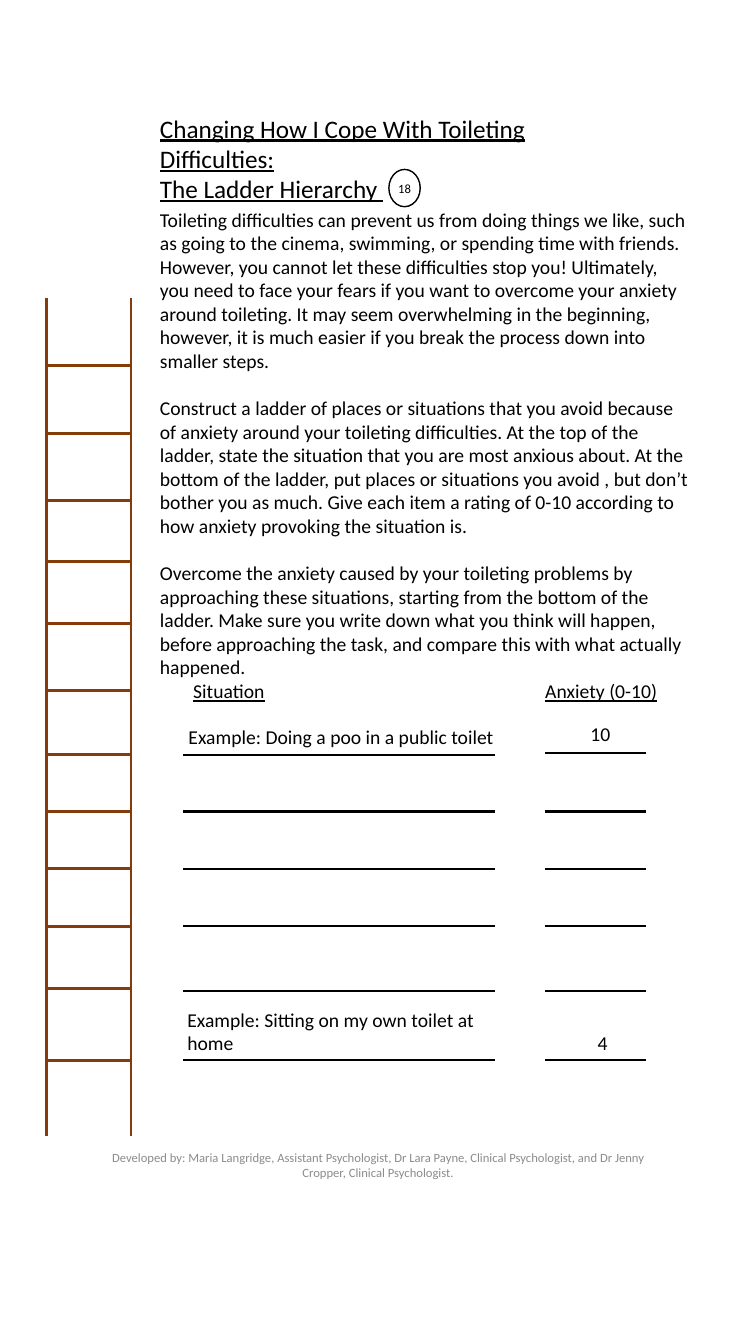
from lxml import etree
from pptx import Presentation, util as u
from pptx.dml.color import RGBColor
from pptx.enum import shapes, text
from pptx.oxml.ns import qn

COLOURS = {"ink": "000000", "wood": "843C0B", "credit": "8C8C8C"}
FONT = "Calibri"
RUNGS = [1.7, 3.4, 5.1, 6.63, 8.2, 9.88, 11.5, 12.93, 14.37, 15.82, 17.4, 19.2]
SITUATION_LINES = [2.03, 3.46, 4.9, 6.35, 7.98, 9.73]
RATING_LINES = [1.98, *SITUATION_LINES[1:]]
TITLE = ["Changing How I Cope With Toileting Difficulties:", "The Ladder Hierarchy "]
INTRODUCTION = [
    "Toileting difficulties can prevent us from doing things we like, such as going to the "
    "cinema, swimming, or spending time with friends. However, you cannot let these "
    "difficulties stop you! Ultimately, you need to face your fears if you want to overcome "
    "your anxiety around toileting. It may seem overwhelming in the beginning, however, it is "
    "much easier if you break the process down into smaller steps.",
    "Construct a ladder of places or situations that you avoid because of anxiety around your "
    "toileting difficulties. At the top of the ladder, state the situation that you are most "
    "anxious about. At the bottom of the ladder, put places or situations you avoid , but "
    "don’t bother you as much. Give each item a rating of 0-10 according to how anxiety "
    "provoking the situation is.",
    "Overcome the anxiety caused by your toileting problems by approaching these situations, "
    "starting from the bottom of the ladder. Make sure you write down what you think will "
    "happen, before approaching the task, and compare this with what actually happened.",
]
CREDIT = ("Developed by: Maria Langridge, Assistant Psychologist, Dr Lara Payne, Clinical "
          "Psychologist, and Dr Jenny Cropper, Clinical Psychologist.")


def colour(name):
    """Return the named colour."""
    return RGBColor.from_string(COLOURS[name])


def write(shape, paragraphs, size=14, ink="ink", underline=False, gap=0,
          align=text.PP_ALIGN.LEFT):
    """Fill a shape with evenly formatted paragraphs."""
    frame = shape.text_frame
    frame.text = "\n".join(paragraphs)
    for index, paragraph in enumerate(frame.paragraphs):
        paragraph.alignment = align
        paragraph.space_before = u.Pt(gap if index else 0)
        for run in paragraph.runs:
            run.font.name = FONT
            run.font.size = u.Pt(size)
            run.font.underline = underline
            run.font.color.rgb = colour(ink)


def add_text(slide, box, paragraphs, **style):
    """Add a wrapping text box."""
    shape = slide.shapes.add_textbox(*map(u.Cm, box))
    shape.text_frame.word_wrap = True
    write(shape, paragraphs, **style)
    return shape


def add_line(slide, start, end, ink, weight):
    """Add a straight line without shadow."""
    line = slide.shapes.add_connector(
        shapes.MSO_CONNECTOR.STRAIGHT, *map(u.Cm, (*start, *end)))
    line.line.color.rgb = colour(ink)
    line.line.width = u.Pt(weight)
    etree.SubElement(line._element.spPr, qn("a:effectLst"))


def add_ladder(slide, left, top, width, height):
    """Draw the two rails and the rungs of the ladder."""
    right = left + width
    for rail in (left, right):
        add_line(slide, (rail, top), (rail, top + height), "wood", 2)
    for rung in RUNGS:
        add_line(slide, (right, top + rung), (left, top + rung), "wood", 2)


def add_title(slide, left, top, width, height):
    """Place the title and its circled page number."""
    add_text(slide, (left, top, width, height), TITLE, size=18, underline=True)
    badge = slide.shapes.add_shape(
        shapes.MSO_SHAPE.OVAL, *map(u.Cm, (left + 6.02, top + 1.55, 0.79, 0.94)))
    badge.shadow.inherit = False
    badge.fill.background()
    badge.line.color.rgb = colour("ink")
    badge.line.width = u.Pt(1)
    frame = badge.text_frame
    frame.word_wrap = False
    frame.margin_left = frame.margin_right = frame.margin_top = frame.margin_bottom = 0
    frame.vertical_anchor = text.MSO_ANCHOR.MIDDLE
    write(badge, ["18"], size=9, align=text.PP_ALIGN.CENTER)


def add_worksheet(slide, left, top):
    """Place the headings, writing lines and example answers."""
    for offset, width, heading in ((0, 5, "Situation"), (8.87, 3.75, "Anxiety (0-10)")):
        add_text(slide, (left + offset, top, width, 0.86), [heading], underline=True)
    for offset, width, rows in ((0, 7.85, SITUATION_LINES), (9.12, 2.54, RATING_LINES)):
        for row in rows:
            add_line(slide, (left + offset, top + row),
                     (left + offset + width, top + row), "ink", 1.5)
    answers = (
        (-0.12, 1.15, 8.33, 0.86, "Example: Doing a poo in a public toilet"),
        (10.01, 1.09, 1.6, 0.86, "10"),
        (-0.15, 8.28, 7.85, 1.45, "Example: Sitting on my own toilet at home"),
        (10.19, 8.87, 1.6, 0.86, "4"),
    )
    for x, y, width, height, answer in answers:
        add_text(slide, (left + x, top + y, width, height), [answer])


def add_credit(slide, left, top, width, height):
    """Place the authors' credit at the foot."""
    shape = add_text(slide, (left, top, width, height), [CREDIT], size=9, ink="credit",
                     align=text.PP_ALIGN.CENTER)
    shape.text_frame.vertical_anchor = text.MSO_ANCHOR.MIDDLE


def main():
    """Build and save the ladder worksheet."""
    presentation = Presentation()
    presentation.slide_width = u.Cm(19.05)
    presentation.slide_height = u.Cm(33.87)
    slide = presentation.slides.add_slide(presentation.slide_layouts[6])
    add_ladder(slide, 1.17, 7.52, 2.13, 21.11)
    add_text(slide, (3.78, 5.11, 13.89, 12.22), INTRODUCTION, gap=17)
    add_worksheet(slide, 4.62, 16.99)
    add_title(slide, 3.78, 2.72, 12.32, 2.57)
    add_credit(slide, 2.39, 28.45, 14.27, 1.8)
    presentation.save("out.pptx")


if __name__ == "__main__":
    main()
